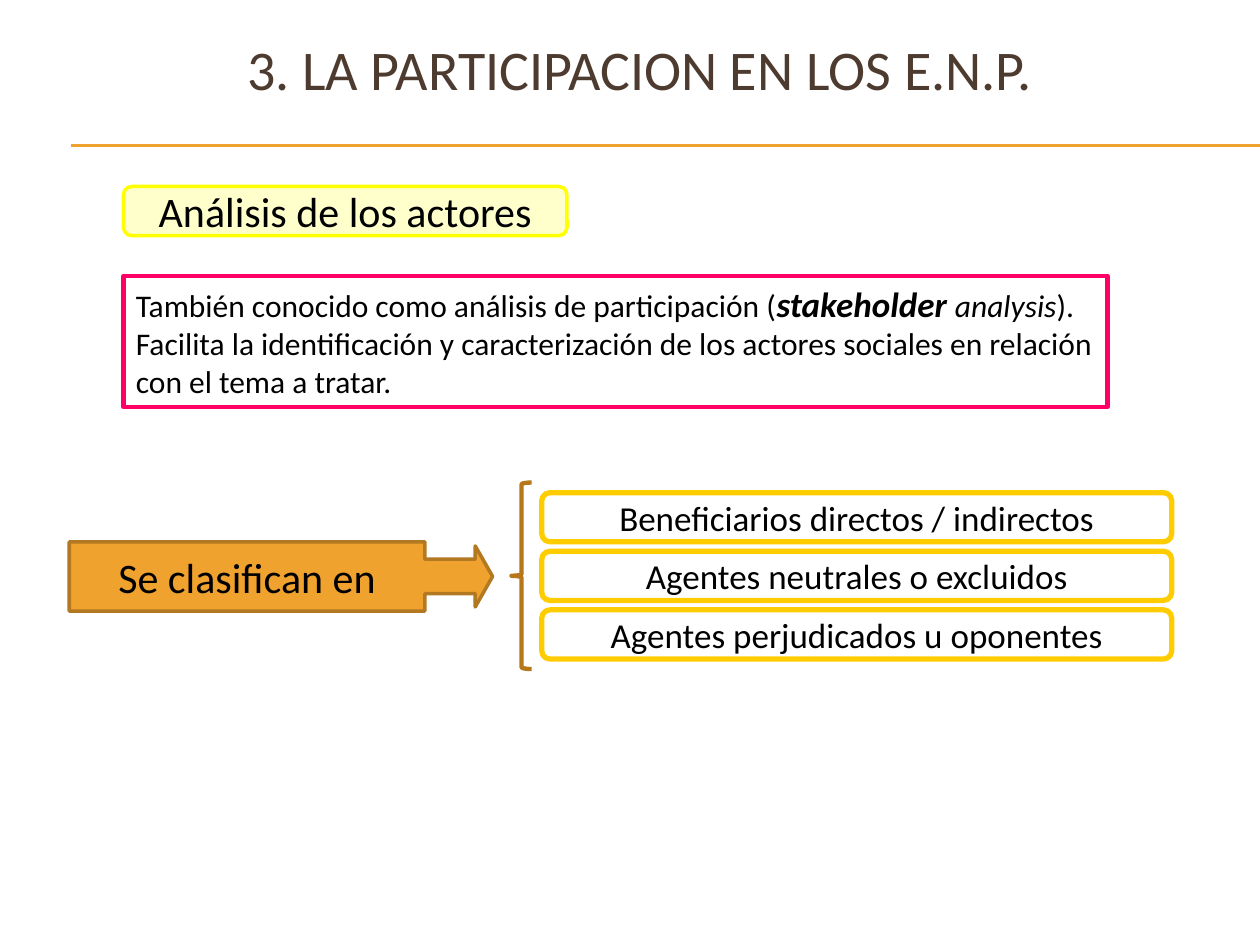
from lxml.etree import SubElement
from pptx import Presentation
from pptx.dml.color import RGBColor
from pptx.enum.shapes import MSO_CONNECTOR, MSO_SHAPE
from pptx.enum.text import MSO_ANCHOR, MSO_AUTO_SIZE, PP_ALIGN
from pptx.oxml.ns import qn
from pptx.util import Inches, Pt

COLORS = {
    "title": "4E3B30",
    "text": "000000",
    "white": "FFFFFF",
    "orange": "F0A22E",
    "arrow_edge": "B27822",
    "brace": "B5771A",
    "cream": "FFFFCC",
    "yellow": "FFFF00",
    "pink": "FF0066",
    "gold": "FFCC00",
}
FONT = "Calibri"
ACTORS = [
    "Beneficiarios directos / indirectos",
    "Agentes neutrales o excluidos",
    "Agentes perjudicados u oponentes",
]
ACTOR_TOP, ACTOR_STEP = 3.91, 0.465


def rgb(name):
    return RGBColor.from_string(COLORS[name])


def add_run(paragraph, text, size, color="text", bold=False, italic=False):
    run = paragraph.add_run()
    run.text = text
    font = run.font
    font.name, font.size = FONT, Pt(size)
    font.bold, font.italic = bold, italic
    font.color.rgb = rgb(color)


def add_centred_text(shape, text, size, color="text"):
    frame = shape.text_frame
    frame.word_wrap = True
    frame.vertical_anchor = MSO_ANCHOR.MIDDLE
    paragraph = frame.paragraphs[0]
    paragraph.alignment = PP_ALIGN.CENTER
    add_run(paragraph, text, size, color)


def add_outlined(slide, kind, box, edge, width, fill=None):
    shape = slide.shapes.add_shape(kind, *map(Inches, box))
    shape.shadow.inherit = False
    if fill:
        shape.fill.solid()
        shape.fill.fore_color.rgb = rgb(fill)
    else:
        shape.fill.background()
    shape.line.color.rgb = rgb(edge)
    shape.line.width = Pt(width)
    return shape


def add_rule(slide, y):
    rule = slide.shapes.add_connector(
        MSO_CONNECTOR.STRAIGHT, Inches(0.56), Inches(y), Inches(10), Inches(y))
    rule.line.color.rgb = rgb("orange")
    rule.line.width = Pt(0.75)
    SubElement(rule._element.spPr, qn("a:effectLst"))


def add_title(slide):
    title = slide.shapes.add_textbox(
        Inches(0.33), Inches(0.08), Inches(9.5), Inches(0.92))
    add_centred_text(title, "3. LA PARTICIPACION EN LOS E.N.P.", 32, "title")


def add_definition(slide):
    definition = add_outlined(
        slide, MSO_SHAPE.RECTANGLE, (0.98, 2.19, 7.81, 1.04), "pink", 2.5, "white")
    frame = definition.text_frame
    frame.word_wrap = True
    frame.auto_size = MSO_AUTO_SIZE.SHAPE_TO_FIT_TEXT
    frame.vertical_anchor = MSO_ANCHOR.TOP
    term, purpose = frame.paragraphs[0], frame.add_paragraph()
    term.alignment = purpose.alignment = PP_ALIGN.LEFT
    add_run(term, "También conocido como análisis de participación (", 18)
    add_run(term, "stakeholder ", 20, bold=True, italic=True)
    add_run(term, "analysis", 18, italic=True)
    add_run(term, ").", 18)
    add_run(purpose, "Facilita la identificación y caracterización de los actores "
            "sociales en relación con el tema a tratar.", 18)


def add_classification(slide):
    for row, actor in enumerate(ACTORS):
        box = (4.3, ACTOR_TOP + row * ACTOR_STEP, 5, 0.39)
        label = add_outlined(
            slide, MSO_SHAPE.ROUNDED_RECTANGLE, box, "gold", 3, "white")
        add_centred_text(label, actor, 20)

    callout = add_outlined(slide, MSO_SHAPE.RIGHT_ARROW_CALLOUT,
                           (0.55, 4.3, 3.36, 0.55), "arrow_edge", 2, "orange")
    for index, value in enumerate((0.5, 0.44, 0.25, 0.84)):
        callout.adjustments[index] = value
    add_centred_text(callout, "Se clasifican en", 24)

    add_outlined(slide, MSO_SHAPE.LEFT_BRACE, (4.06, 3.83, 0.16, 1.48), "brace", 2.5)


def main():
    presentation = Presentation()
    presentation.slide_width, presentation.slide_height = Inches(10), Inches(7.5)
    slide = presentation.slides.add_slide(presentation.slide_layouts[6])
    for y in (1.15, 1.16):
        add_rule(slide, y)
    add_title(slide)
    heading = add_outlined(slide, MSO_SHAPE.ROUNDED_RECTANGLE,
                           (0.98, 1.48, 3.52, 0.39), "yellow", 2, "cream")
    add_centred_text(heading, "Análisis de los actores", 24)
    add_definition(slide)
    add_classification(slide)
    presentation.save("out.pptx")


if __name__ == "__main__":
    main()
